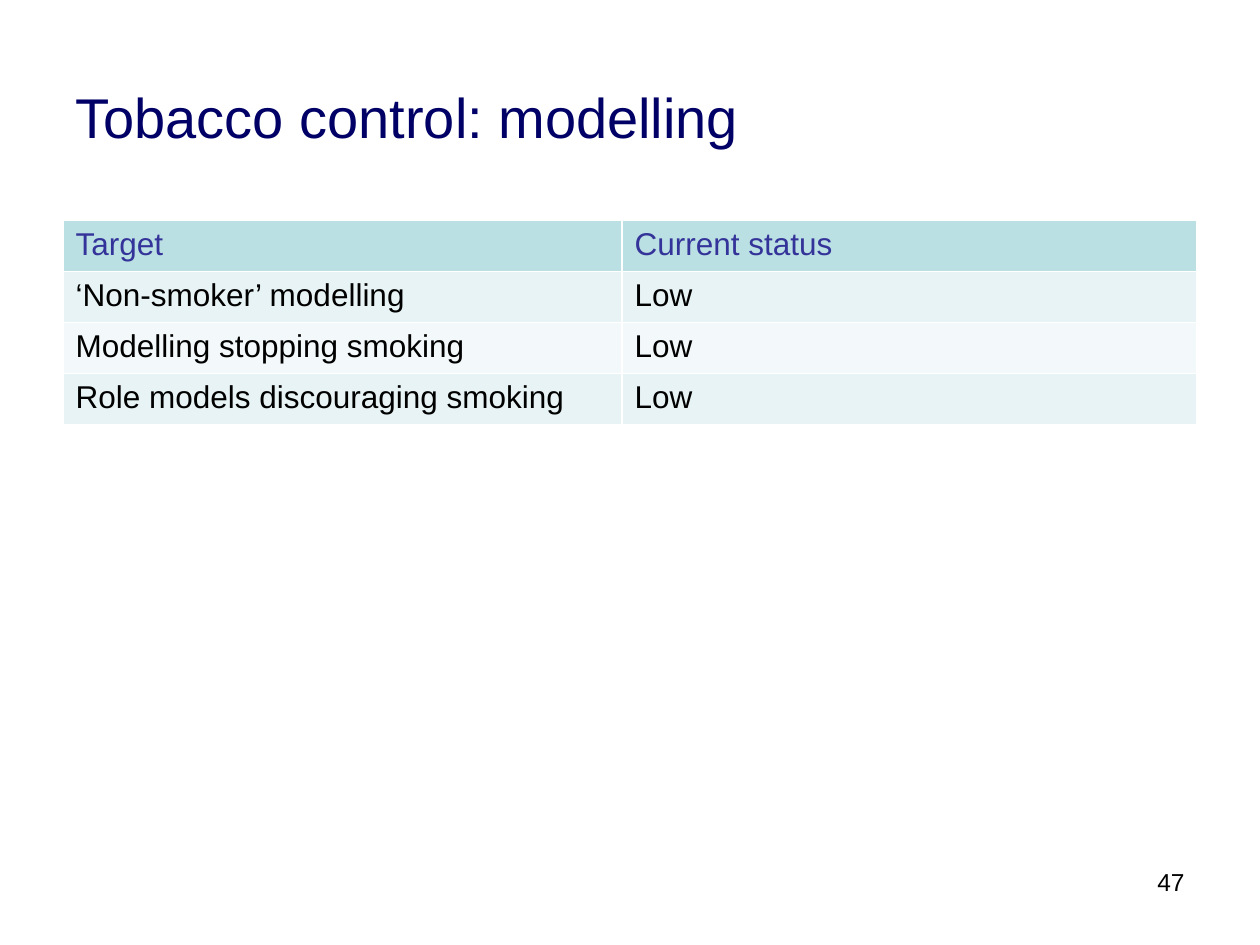
from lxml.etree import SubElement
from pptx import Presentation
from pptx.dml.color import RGBColor
from pptx.enum.text import MSO_ANCHOR as Anchor, PP_ALIGN as Align
from pptx.oxml.ns import qn
from pptx.util import Inches, Pt

ROWS = [
    ("Target", "Current status"),
    ("‘Non-smoker’ modelling", "Low"),
    ("Modelling stopping smoking", "Low"),
    ("Role models discouraging smoking", "Low"),
]
COLUMN_SHARES = (0.493, 0.507)
HEADER_FILL = "BBE0E3"
BAND_FILLS = ("E7F3F4", "F3F9FA")


def color(value):
    """Turn a hex string into a colour."""
    return RGBColor.from_string(value)


def write(frame, text, size=18, ink="000000", align=Align.LEFT, anchor=Anchor.TOP):
    """Put one formatted paragraph into a text frame."""
    frame.word_wrap = True
    frame.vertical_anchor = anchor
    para = frame.paragraphs[0]
    para.alignment = align
    span = para.add_run()
    span.text = text
    span.font.name = "Arial"
    span.font.size = Pt(size)
    span.font.bold = False
    span.font.color.rgb = color(ink)


def add_text(page, box, text, **style):
    """Add a text box in the given box of inches."""
    shape = page.shapes.add_textbox(*map(Inches, box))
    write(shape.text_frame, text, **style)


def add_borders(cell, ink="FFFFFF", width=1):
    """Draw a solid line on each side of a cell."""
    properties = cell._tc.get_or_add_tcPr()
    for side in ("a:lnL", "a:lnR", "a:lnT", "a:lnB"):
        line = SubElement(properties, qn(side), w=str(Pt(width)))
        fill = SubElement(line, qn("a:solidFill"))
        SubElement(fill, qn("a:srgbClr"), val=ink)


def add_status_table(page, box):
    """Add the banded table of targets and their status."""
    frame = page.shapes.add_table(len(ROWS), len(COLUMN_SHARES), *map(Inches, box))
    table = frame.table
    for column, share in zip(table.columns, COLUMN_SHARES):
        column.width = Inches(box[2] * share)
    for row, texts in enumerate(ROWS):
        back = BAND_FILLS[(row - 1) % 2] if row else HEADER_FILL
        ink = "000000" if row else "333399"
        for column, text in enumerate(texts):
            cell = table.cell(row, column)
            add_borders(cell)
            cell.fill.solid()
            cell.fill.fore_color.rgb = color(back)
            write(cell.text_frame, text, ink=ink)


def main():
    """Build the slide and save the deck."""
    deck = Presentation()
    deck.slide_width, deck.slide_height = Inches(10), Inches(7.5)
    page = deck.slides.add_slide(deck.slide_layouts[6])
    add_text(page, (0.5, 0.3, 8.97, 1.25), "Tobacco control: modelling",
             size=32, ink="000066", anchor=Anchor.MIDDLE)
    add_status_table(page, (0.5, 1.75, 9, 1.62))
    add_text(page, (6.73, 6.83, 2.77, 0.52), "47", size=14, align=Align.RIGHT)
    deck.save("out.pptx")


if __name__ == "__main__":
    main()
